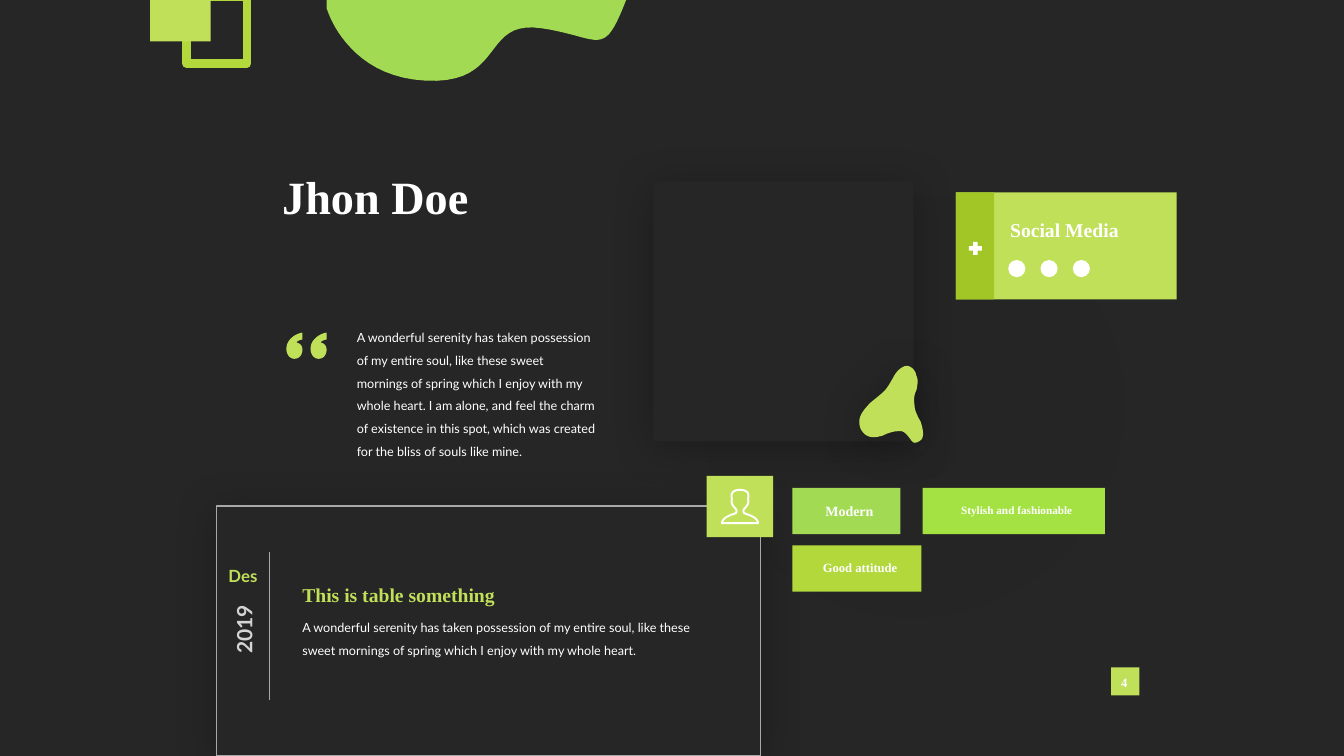
from pptx import Presentation, util as u
from pptx.dml.color import RGBColor
from pptx.enum import shapes, text
from pptx.oxml.ns import qn
from lxml import etree

SERIF, SANS = "Times New Roman", "Lato"
WHITE, LIME, LEAF, GRASS = "FFFFFF", "C1E05A", "A2DA54", "B2D83C"
DARK, GREY = "262626", "A8A8A8"
KIND = shapes.MSO_SHAPE
MID, TOP = text.MSO_ANCHOR.MIDDLE, text.MSO_ANCHOR.TOP
LEFT, CENTER = text.PP_ALIGN.LEFT, text.PP_ALIGN.CENTER


def rgb(code):
    return RGBColor.from_string(code)


def sub(node, tag, **attrs):
    return etree.SubElement(node, qn(tag), attrs)


def paint(shape, fill=None, line=None, width=1):
    shape.shadow.inherit = False
    if fill:
        shape.fill.solid()
        shape.fill.fore_color.rgb = rgb(fill)
    else:
        shape.fill.background()
    if line:
        shape.line.color.rgb = rgb(line)
        shape.line.width = u.Pt(width)
    else:
        shape.line.fill.background()
    return shape


def block(page, x, y, w, h, fill=None, line=None, width=1, kind=KIND.RECTANGLE):
    box = [u.Inches(v) for v in (x, y, w, h)]
    return paint(page.shapes.add_shape(kind, *box), fill, line, width)


def glow(shape):
    """Wide soft shadow below a shape."""
    effect = shape._element.spPr.find(qn("a:effectLst"))
    cast = sub(effect, "a:outerShdw", blurRad=str(u.Pt(31)), dist=str(u.Pt(4)),
               dir="5400000", algn="t", rotWithShape="0")
    sub(sub(cast, "a:srgbClr", val="000000"), "a:alpha", val="25000")


def label(page, x, y, w, h, words, size, color=WHITE, face=SERIF, bold=True,
          align=LEFT, anchor=TOP, turn=0, **para):
    box = page.shapes.add_textbox(*[u.Inches(v) for v in (x, y, w, h)])
    box.rotation = turn
    frame = box.text_frame
    frame.word_wrap, frame.vertical_anchor = True, anchor
    first = frame.paragraphs[0]
    for key, val in {"alignment": align, **para}.items():
        setattr(first, key, val)
    run = first.add_run()
    run.text = words
    for key, val in {"name": face, "size": u.Pt(size), "bold": bold}.items():
        setattr(run.font, key, val)
    run.font.color.rgb = rgb(color)


def curve(page, x, y, knots, fill=None, line=None, width=1, steps=10):
    """Closed outline through cubic curves: a start, then three knots each."""
    dots = [knots[0]]
    for i in range(0, len(knots) - 1, 3):
        for n in range(1, steps + 1):
            t = n / steps
            mix = ((1 - t) ** 3, 3 * t * (1 - t) ** 2, 3 * t * t * (1 - t), t ** 3)
            dots.append(tuple(sum(m * k[a] for m, k in zip(mix, knots[i:i + 4]))
                              for a in (0, 1)))
    dots = [((x + a) * 1000, (y + b) * 1000) for a, b in dots]
    pen = page.shapes.build_freeform(*dots[0], scale=u.Inches(1) / 1000)
    pen.add_line_segments(dots[1:], close=True)
    return paint(pen.convert_to_shape(), fill, line, width)


# Title and quotation
def quote(page, x, y, w):
    label(page, x, y, w, 1.73, "Jhon Doe", 33, anchor=MID, space_before=u.Pt(10))
    mark = [(.16, .07), (.14, .07), (.11, .08), (.1, .1),
            (.13, .1), (.16, .13), (.16, .17), (.16, .22), (.13, .26), (.08, .26),
            (.03, .26), (0, .21), (0, .16), (0, .07), (.09, .01), (.16, 0)]
    for gap in (0, .24):
        curve(page, x + .14 + gap, y + 2.22, mark, LIME)
    label(page, x + .74, y + 2.07, 2.58, 1.43,
          "A wonderful serenity has taken possession of my entire soul, like "
          "these sweet mornings of spring which I enjoy with my whole heart. "
          "I am alone, and feel the charm of existence in this spot, which was "
          "created for the bliss of souls like mine.",
          9, face=SANS, bold=False, line_spacing=1.5)


# Social media card
def social(page, x, y, w, h):
    block(page, x, y, w, h, LIME)
    block(page, x, y, .38, h, "A1C625")
    plus = block(page, x + .13, y + .49, .13, .13, WHITE, kind=KIND.CROSS)
    plus.adjustments[0] = .33
    label(page, x + .44, y + .2, 1.62, .34, "Social Media", 14, anchor=MID)
    for i in range(3):
        block(page, x + .52 + i * .32, y + .67, .17, .17, WHITE, kind=KIND.OVAL)


# Dated note with a person badge on its corner
def note(page, x, y, w, h):
    glow(block(page, x, y, w, h, DARK, GREY))
    ends = [u.Inches(v) for v in (x + .52, y + .46, x + .52, y + 1.92)]
    rule = page.shapes.add_connector(shapes.MSO_CONNECTOR.STRAIGHT, *ends)
    rule.line.color.rgb, rule.line.width = rgb(GREY), u.Pt(.5)
    sub(rule._element.spPr, "a:effectLst")
    label(page, x - .03, y + .54, .58, .3, "Des", 12, LIME, SANS,
          align=CENTER, anchor=MID)
    label(page, x - .12, y + 1.05, .78, .35, "2019", 15, "D4D4D4", SANS,
          align=CENTER, anchor=MID, turn=270)
    label(page, x + .75, y + .71, 2.64, .34, "This is table something", 14,
          LIME, anchor=MID)
    label(page, x + .75, y + 1.01, 4.35, .53,
          "A wonderful serenity has taken possession of my entire soul, like "
          "these sweet mornings of spring which I enjoy with my whole heart.",
          9, face=SANS, bold=False, line_spacing=1.5)
    block(page, x + w - .53, y - .3, .66, .61, LIME)
    side = [(0, .01), (.05, .01), (.1, .03), (.08, .1), (.09, .13), (.08, .15),
            (.06, .18), (.03, .21), (.03, .21), (.04, .24),
            (.05, .25), (.17, .27), (.18, .34)]
    back = [(-a, b) for a, b in reversed(side)]
    curve(page, x + w - .2, y - .17, side + [side[-1], back[0]] + back,
          line=WHITE, width=1.4)


# Tags
def tags(page, x, y):
    for dx, dy, w, fill, words, size, tall in (
            (0, 0, 1.07, LEAF, "Modern", 10, .28),
            (1.29, 0, 1.81, "A4E243", "Stylish and fashionable", 8, .24),
            (0, .57, 1.28, GRASS, "Good attitude", 9, .25)):
        block(page, x + dx, y + dy, w, .46, fill)
        label(page, x + dx + .03, y + dy + .1, w, tall, words, size, align=CENTER)


# Photo frame with a blob on its corner
def frame(page, x, y, w, h):
    glow(block(page, x, y, w, h, DARK))
    blob = [(.48, .65), (.42, .64), (.35, .66), (.29, .69), (.23, .71), (.16, .72),
            (.11, .68), (.06, .64), (.04, .57), (.06, .51), (.08, .45), (.13, .4),
            (.17, .36), (.22, .32), (.27, .28), (.31, .24), (.35, .19), (.38, .13),
            (.41, .08), (.44, .04), (.48, 0), (.53, 0), (.58, .01), (.61, .05),
            (.62, .1), (.64, .14), (.63, .19), (.62, .24), (.6, .28), (.59, .33),
            (.6, .38), (.6, .44), (.63, .5), (.66, .55), (.68, .61), (.7, .69),
            (.67, .73), (.65, .75), (.61, .77), (.59, .76), (.56, .74), (.53, .67),
            (.48, .65)]
    glow(curve(page, x + w - .59, y + h - .75, blob, LIME))


# Shapes along the top edge
def trim(page, x, y):
    wave = [(0, .08), (0, .08), (.19, .76), (.98, .8), (1.78, .84), (1.53, .19),
            (2.13, .28), (2.73, .37), (2.74, .59), (2.97, 0), (0, 0), (0, 0), (0, 0)]
    curve(page, x + 1.75, y, wave, LEAF, steps=20)
    block(page, x + .36, y - .03, .6, .66, line=GRASS, width=6)
    block(page, x, y - .21, .6, .62, LIME)


# Page number
def number(page, x, y, side):
    block(page, x, y, side, side, LIME)
    label(page, x - .07, y + .03, .4, .25, "4", 9, align=CENTER)


def main():
    deck = Presentation()
    deck.slide_width, deck.slide_height = u.Inches(13.33), u.Inches(7.5)
    page = deck.slides.add_slide(deck.slide_layouts[6])
    page.background.fill.solid()
    page.background.fill.fore_color.rgb = rgb(DARK)
    # Faint disc
    disc = block(page, 6.95, 1.93, 4.2, 4.2, "131313", kind=KIND.OVAL)
    sub(disc._element.spPr.find(".//" + qn("a:srgbClr")), "a:alpha", val="5000")
    social(page, 9.48, 1.91, 2.19, 1.06)
    frame(page, 6.48, 1.8, 2.58, 2.58)
    quote(page, 2.7, 1.08, 2.59)
    note(page, 2.15, 5.02, 5.39, 2.48)
    tags(page, 7.86, 4.84)
    trim(page, 1.49, 0)
    number(page, 11.02, 6.62, .28)
    deck.save("out.pptx")


if __name__ == "__main__":
    main()
